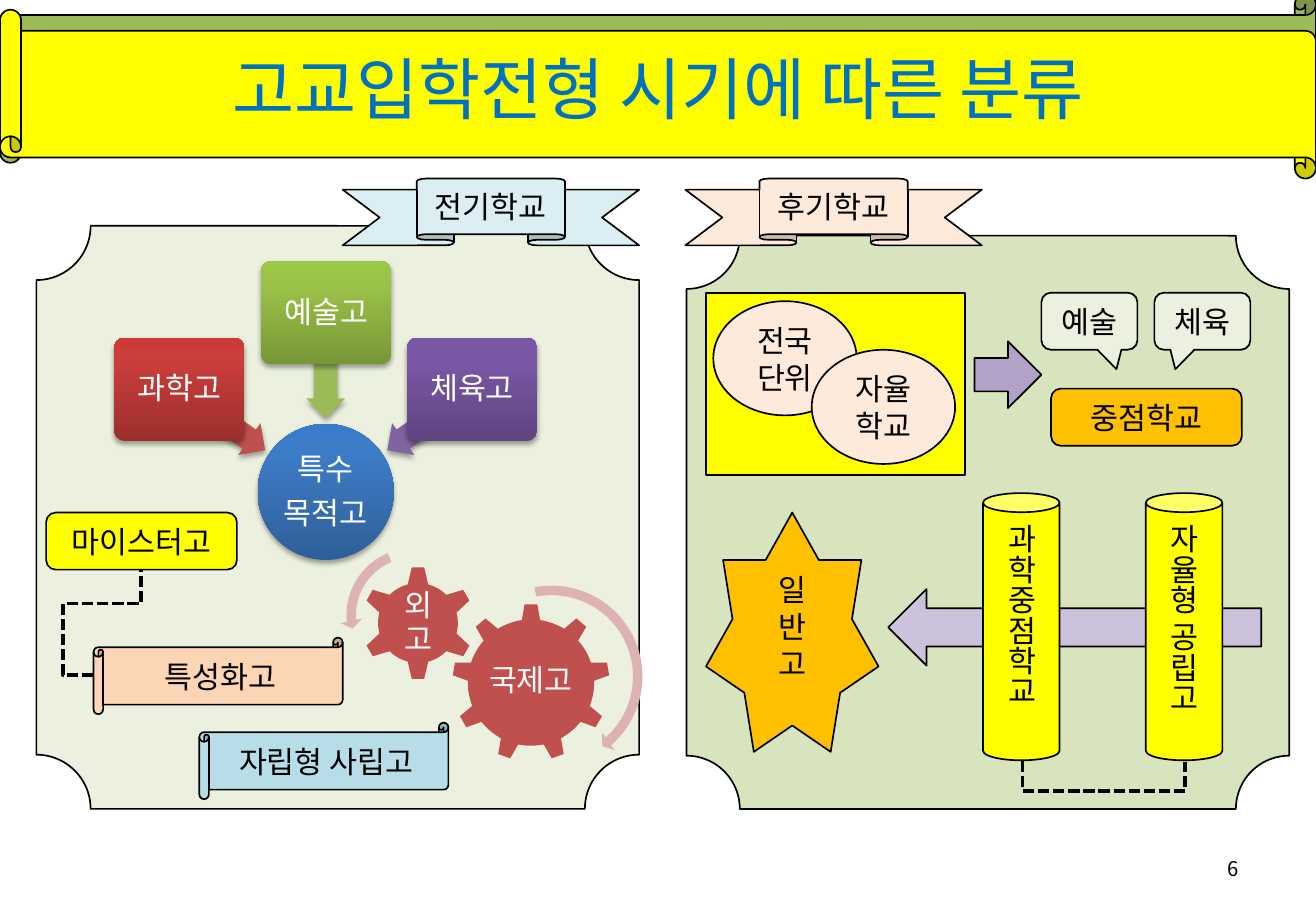
import pptx
import pptx.util
import pptx.oxml
import pptx.oxml.ns
import pptx.dml.color
import pptx.enum.shapes
import pptx.enum.text
import lxml.etree

RGBColor = pptx.dml.color.RGBColor
SHAPE = pptx.enum.shapes.MSO_SHAPE
ALIGN = pptx.enum.text.PP_ALIGN
Pt = pptx.util.Pt
qn = pptx.oxml.ns.qn

BLACK = RGBColor(0x00, 0x00, 0x00)
WHITE = RGBColor(0xFF, 0xFF, 0xFF)
BLUE = RGBColor(0x00, 0x70, 0xC0)
YELLOW = RGBColor(0xFF, 0xFF, 0x00)
ORANGE = RGBColor(0xFF, 0xC0, 0x00)
GREEN = RGBColor(0x9B, 0xBB, 0x59)
RED = RGBColor(0xC0, 0x50, 0x4D)
PURPLE = RGBColor(0x80, 0x64, 0xA2)
PINK = RGBColor(0xDC, 0xB3, 0xB2)
PEACH = RGBColor(0xFC, 0xD5, 0xB5)
CREAM = RGBColor(0xFD, 0xEA, 0xDA)
SKY = RGBColor(0xB7, 0xDE, 0xE8)
PALE_SKY = RGBColor(0xDB, 0xEE, 0xF4)
PALE_GREEN = RGBColor(0xEB, 0xF1, 0xDE)
LIGHT_GREEN = RGBColor(0xD7, 0xE4, 0xBD)
LILAC = RGBColor(0xB3, 0xA2, 0xC7)
PALE_LILAC = RGBColor(0xCC, 0xC1, 0xDA)

FONT = "Noto Sans CJK KR"
LINE_HEIGHT = 1.22
DRAWING = 'xmlns:a="http://schemas.openxmlformats.org/drawingml/2006/main"'
SHADOW = (f'<a:outerShdw {DRAWING} blurRad="39370" dist="22860" dir="5400000" rotWithShape="0">'
          '<a:srgbClr val="000000"><a:alpha val="35000"/></a:srgbClr></a:outerShdw>')

presentation = pptx.Presentation()
presentation.slide_width = pptx.util.Inches(10.83)
presentation.slide_height = pptx.util.Inches(7.5)
slide = presentation.slides.add_slide(presentation.slide_layouts[6])
CELL = presentation.slide_height / 75


def write(shape, lines, size=18, color=BLACK, align=ALIGN.CENTER, wrap=False, tight=1, margin=None):
    frame = shape.text_frame
    frame.word_wrap = wrap
    frame.vertical_anchor = pptx.enum.text.MSO_ANCHOR.MIDDLE
    if margin is not None:
        frame.margin_left = frame.margin_right = int(margin * CELL)
        frame.margin_top = frame.margin_bottom = int(margin * CELL)
    for index, line in enumerate(lines):
        paragraph = frame.add_paragraph() if index else frame.paragraphs[0]
        paragraph.alignment = align
        paragraph.line_spacing = Pt(round(size * LINE_HEIGHT * tight, 1))
        if index and tight < 1:
            paragraph.space_before = Pt(6.3)
        run = paragraph.add_run()
        run.text = line
        run.font.size = Pt(size)
        run.font.name = FONT
        run.font.color.rgb = color
        lxml.etree.SubElement(run.font._element, qn("a:ea")).set("typeface", FONT)


def draw(kind, place, fill, lines=(), outline=True, adjust=(), turn=0, flip=None, glow=None):
    shape = slide.shapes.add_shape(kind, *[int(length * CELL) for length in place])
    shape.shadow.inherit = False
    shape.fill.solid()
    shape.fill.fore_color.rgb = fill
    if outline:
        shape.line.color.rgb = BLACK
        shape.line.width = Pt(1)
    else:
        shape.line.fill.background()
    for index, value in enumerate(adjust):
        shape.adjustments[index] = value
    shape.rotation = turn
    properties = shape._element.spPr
    if flip:
        properties.find(qn("a:xfrm")).set(flip, "1")
    if glow is not None:
        properties.find(qn("a:effectLst")).append(pptx.oxml.parse_xml(SHADOW))
    if glow:
        stops = "".join(f'<a:gs pos="{position}"><a:srgbClr val="{color}"/></a:gs>'
                        for position, color in zip((0, 80000, 100000), glow))
        gradient = pptx.oxml.parse_xml(f'<a:gradFill {DRAWING} rotWithShape="1"><a:gsLst>{stops}</a:gsLst>'
                                       '<a:lin ang="16200000" scaled="0"/></a:gradFill>')
        properties.replace(properties.find(qn("a:solidFill")), gradient)
    if lines:
        write(shape, lines)
    return shape


draw(SHAPE.HORIZONTAL_SCROLL, (0, -0.5, 108.3, 13.9), GREEN)
draw(SHAPE.HORIZONTAL_SCROLL, (0, 0.8, 108.3, 13.9), YELLOW, flip="flipV")
for place, line, size, color, align in (
    ((5.4, 0.9, 97.5, 12.5), "고교입학전형 시기에 따른 분류", 40, BLUE, ALIGN.CENTER),
    ((77.6, 69.5, 25.3, 4), "6", 12, BLACK, ALIGN.RIGHT),
):
    box = slide.shapes.add_textbox(*[int(length * CELL) for length in place])
    write(box, [line], size, color, align, wrap=True)

draw(SHAPE.PLAQUE, (3, 18.6, 49.6, 48), PALE_GREEN, adjust=[0.093])
draw(SHAPE.UP_RIBBON, (28.2, 14.7, 24.4, 5.5), PALE_SKY, ["전기학교"])

purpose = draw(SHAPE.OVAL, (21.2, 34.9, 11.2, 11.2), BLUE, outline=False, glow=("2F5F99", "3D7CC7", "3A7CCB"))
write(purpose, ["특수", "목적고"], color=WHITE, wrap=True, tight=0.9, margin=0.1)
for name, left, top, arrow_left, arrow_top, turn, color, glow in (
    ("과학고", 9.4, 27.8, 14, 33, 215, RED, ("9C2F2D", "CB3E3A", "CE3B37")),
    ("예술고", 21.5, 21.5, 22.5, 28.5, 270, GREEN, ("779737", "9BC348", "9DC746")),
    ("체육고", 33.5, 27.8, 31.1, 33, 325, PURPLE, ("5F4480", "7B58A6", "7C57A8")),
):
    draw(SHAPE.LEFT_ARROW, (arrow_left, arrow_top, 8.6, 3.2), color,
         outline=False, adjust=(0.6, 0.5), turn=turn, glow=())
    school = draw(SHAPE.ROUNDED_RECTANGLE, (left, top, 10.7, 8.5), color, outline=False, adjust=[0.1], glow=glow)
    write(school, [name], color=WHITE, wrap=True, tight=0.9, margin=0.4)

for kind, place, name in (
    (SHAPE.GEAR_9, (37.2, 49.7, 13, 13), "국제고"),
    (SHAPE.GEAR_6, (29.7, 46.6, 9.4, 9.4), "외고"),
):
    gear = draw(kind, place, RED, outline=False)
    write(gear, [name], color=WHITE, wrap=True, tight=0.9, margin=0.3)
draw(SHAPE.CIRCULAR_ARROW, (37.4, 47.7, 16, 16), PINK, outline=False,
     adjust=(0.049, 3.126, 29.247, 155.483, 0.057))
draw(SHAPE.LEFT_CIRCULAR_ARROW, (28, 44.6, 12.1, 12.1), PINK, outline=False,
     adjust=(0.065, 4.3, 104.891, 148.378, 0.075))

draw(SHAPE.ROUNDED_RECTANGLE, (3.8, 42.2, 15.7, 4.7), YELLOW, ["마이스터고"])
draw(SHAPE.HORIZONTAL_SCROLL, (7.7, 52.5, 20.5, 6.3), PEACH, ["특성화고"])
draw(SHAPE.HORIZONTAL_SCROLL, (16.4, 59.5, 20.5, 6.3), SKY, ["자립형 사립고"])

draw(SHAPE.PLAQUE, (56.5, 19.4, 49.6, 47.2), LIGHT_GREEN, adjust=[0.093])
draw(SHAPE.UP_RIBBON, (56.4, 14.7, 24.4, 5.5), CREAM, ["후기학교"])
draw(SHAPE.RECTANGLE, (58.1, 24.1, 21.3, 15), YELLOW)
draw(SHAPE.OVAL, (58.7, 24.8, 11.8, 9.4), CREAM, ["전국", "단위"])
draw(SHAPE.OVAL, (66.8, 28.8, 11.8, 9.4), CREAM, ["자율", "학교"])
draw(SHAPE.RIGHT_ARROW, (80.2, 28.1, 5.5, 5.5), LILAC)
for left, name, flip in ((85.7, "예술", None), (95, "체육", "flipH")):
    draw(SHAPE.ROUNDED_RECTANGULAR_CALLOUT, (left, 24.1, 7.9, 4.7), PALE_GREEN, [name],
         adjust=(0.282, 0.841, 0.167), flip=flip)
draw(SHAPE.STAR_7_POINT, (58.1, 42.2, 14.2, 19.7), ORANGE, ["일", "반", "고"])
draw(SHAPE.LEFT_ARROW, (73.1, 48.5, 30.7, 6.3), PALE_LILAC)
for left, name in ((80.9, "과학중점학교"), (94.3, "자율형 공립고")):
    pillar = draw(SHAPE.CAN, (left, 40.6, 6.3, 22), YELLOW, [name])
    pillar.text_frame._txBody.bodyPr.set("vert", "eaVert")
draw(SHAPE.ROUNDED_RECTANGLE, (86.5, 32, 15.7, 4.7), ORANGE, ["중점학교"])

for left, top, width, height, turn, preset, bends in (
    (7.7, 46.9, 3.9, 8.7, 180, "bentConnector4", (-0.64, 0.68)),
    (90.8, 56, 0.1, 13.4, 270, "bentConnector3", (25,)),
):
    link = slide.shapes.add_connector(
        pptx.enum.shapes.MSO_CONNECTOR.ELBOW,
        *[int(length * CELL) for length in (left, top, left + width, top + height)])
    link.line.color.rgb = BLACK
    link.line.width = Pt(2.25)
    link.line.dash_style = pptx.enum.dml.MSO_LINE.SQUARE_DOT
    properties = link._element.spPr
    lxml.etree.SubElement(properties, qn("a:effectLst"))
    frame = properties.find(qn("a:xfrm"))
    frame.set("rot", str(turn * 60000))
    frame.set("flipH", "1")
    geometry = properties.find(qn("a:prstGeom"))
    geometry.set("prst", preset)
    guides = geometry.find(qn("a:avLst"))
    for number, bend in enumerate(bends, 1):
        guide = lxml.etree.SubElement(guides, qn("a:gd"))
        guide.set("name", f"adj{number}")
        guide.set("fmla", f"val {int(bend * 100000)}")

presentation.save("out.pptx")
